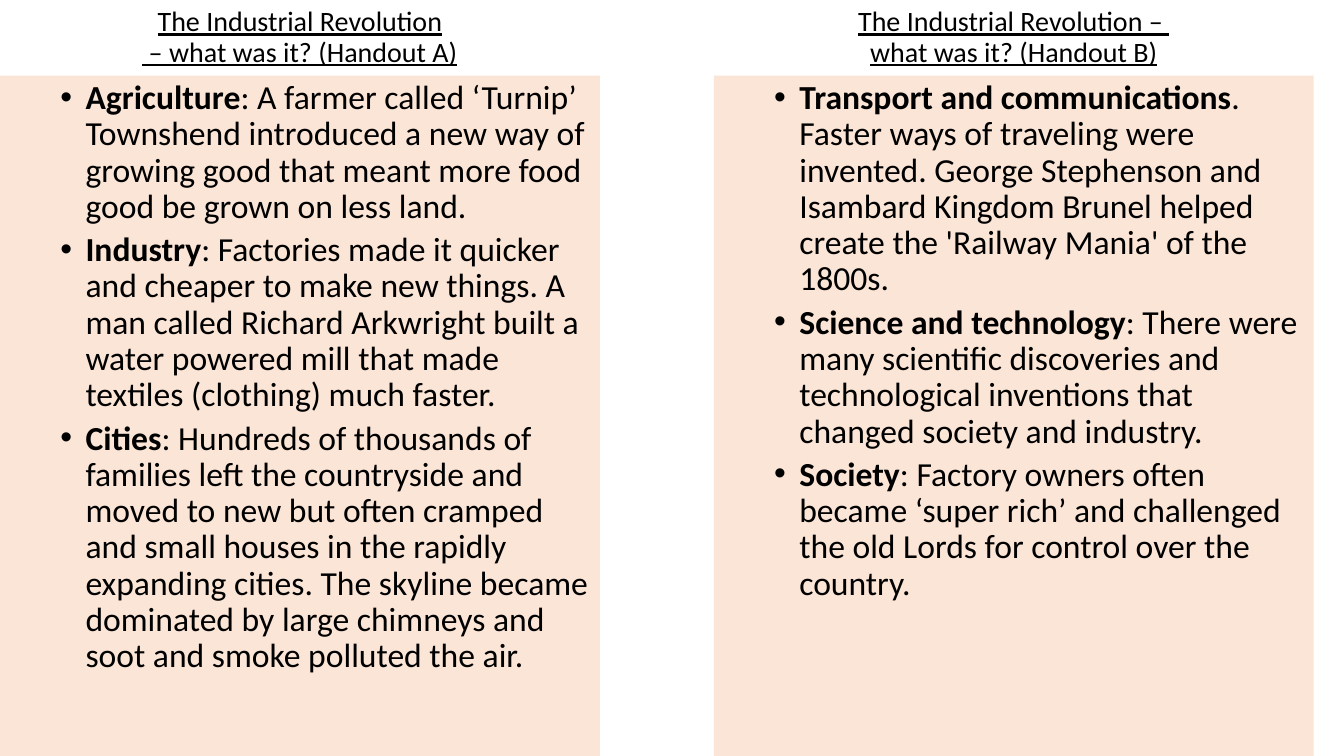
from dataclasses import dataclass

from lxml.etree import SubElement
from pptx import Presentation
from pptx.dml.color import RGBColor
from pptx.enum.shapes import MSO_SHAPE as Shape
from pptx.enum.text import MSO_ANCHOR as Anchor, PP_ALIGN as Align
from pptx.oxml.ns import qn
from pptx.slide import Slide
from pptx.util import Inches, Pt

PANEL_WIDTH, HEADING_HEIGHT, SLIDE_HEIGHT = 5.95, 0.75, 7.5
BODY_FORMAT = {"name": "Calibri", "size": Pt(24)}
HEADING_FORMAT = {"name": "Calibri", "size": Pt(20), "underline": True}


@dataclass
class Topic:
    name: str
    detail: str


@dataclass
class Handout:
    left: float
    heading: str  # "\v" breaks a line, "\n" starts a paragraph
    topics: list[Topic]


HANDOUTS = [
    Handout(0, "The Industrial Revolution\v – what was it? (Handout A)", [
        Topic("Agriculture", ": A farmer called ‘Turnip’ Townshend introduced a new way of "
              "growing good that meant more food good be grown on less land."),
        Topic("Industry", ": Factories made it quicker and cheaper to make new things. "
              "A man called Richard Arkwright built a water powered mill that made "
              "textiles (clothing) much faster."),
        Topic("Cities", ": Hundreds of thousands of families left the countryside and moved "
              "to new but often cramped and small houses in the rapidly expanding cities. "
              "The skyline became dominated by large chimneys and soot and smoke "
              "polluted the air."),
    ]),
    Handout(7.08, "The Industrial Revolution – \nwhat was it? (Handout B)", [
        Topic("Transport and communications", ". Faster ways of traveling were invented. "
              "George Stephenson and Isambard Kingdom Brunel helped create the "
              "'Railway Mania' of the 1800s."),
        Topic("Science and technology", ": There were many scientific discoveries and "
              "technological inventions that changed society and industry."),
        Topic("Society", ": Factory owners often became ‘super rich’ and challenged the old "
              "Lords for control over the country."),
    ]),
]


def color(value: str) -> RGBColor:
    return RGBColor.from_string(value)


def format_run(run, settings: dict) -> None:
    for attribute, value in settings.items():
        setattr(run.font, attribute, value)
    run.font.color.rgb = color("000000")


def add_bullet(paragraph) -> None:
    properties = paragraph._p.get_or_add_pPr()
    properties.set("marL", str(Inches(0.75)))
    properties.set("indent", str(Inches(-0.25)))
    SubElement(properties, qn("a:buFont"), typeface="Arial")
    SubElement(properties, qn("a:buChar"), char="•")


def add_heading(slide: Slide, handout: Handout) -> None:
    heading = slide.shapes.add_textbox(Inches(handout.left), 0, Inches(PANEL_WIDTH),
                                       Inches(HEADING_HEIGHT)).text_frame
    heading.word_wrap = True
    heading.vertical_anchor = Anchor.MIDDLE
    heading.text = handout.heading
    for paragraph in heading.paragraphs:
        paragraph.alignment = Align.CENTER
        paragraph.line_spacing = 0.9
        for run in paragraph.runs:
            format_run(run, HEADING_FORMAT)


def add_topics(slide: Slide, handout: Handout) -> None:
    panel = slide.shapes.add_shape(
        Shape.RECTANGLE, Inches(handout.left), Inches(HEADING_HEIGHT),
        Inches(PANEL_WIDTH), Inches(SLIDE_HEIGHT - HEADING_HEIGHT))
    panel.shadow.inherit = False
    panel.fill.solid()
    panel.fill.fore_color.rgb = color("FBE5D6")
    panel.line.fill.background()
    body = panel.text_frame
    body.word_wrap = True
    body.vertical_anchor = Anchor.TOP
    for index, topic in enumerate(handout.topics):
        paragraph = body.add_paragraph() if index else body.paragraphs[0]
        add_bullet(paragraph)
        paragraph.level = 1
        paragraph.alignment = Align.LEFT
        paragraph.line_spacing = 0.9
        paragraph.space_before = Pt(5 if index else 0)
        for text, bold in ((topic.name, True), (topic.detail, False)):
            run = paragraph.add_run()
            run.text = text
            format_run(run, BODY_FORMAT | {"bold": bold})


def main() -> None:
    deck = Presentation()
    deck.slide_width, deck.slide_height = Inches(13.33), Inches(SLIDE_HEIGHT)
    slide = deck.slides.add_slide(deck.slide_layouts[6])
    # Two handouts side by side
    for handout in HANDOUTS:
        add_heading(slide, handout)
        add_topics(slide, handout)
    deck.save("out.pptx")


if __name__ == "__main__":
    main()
